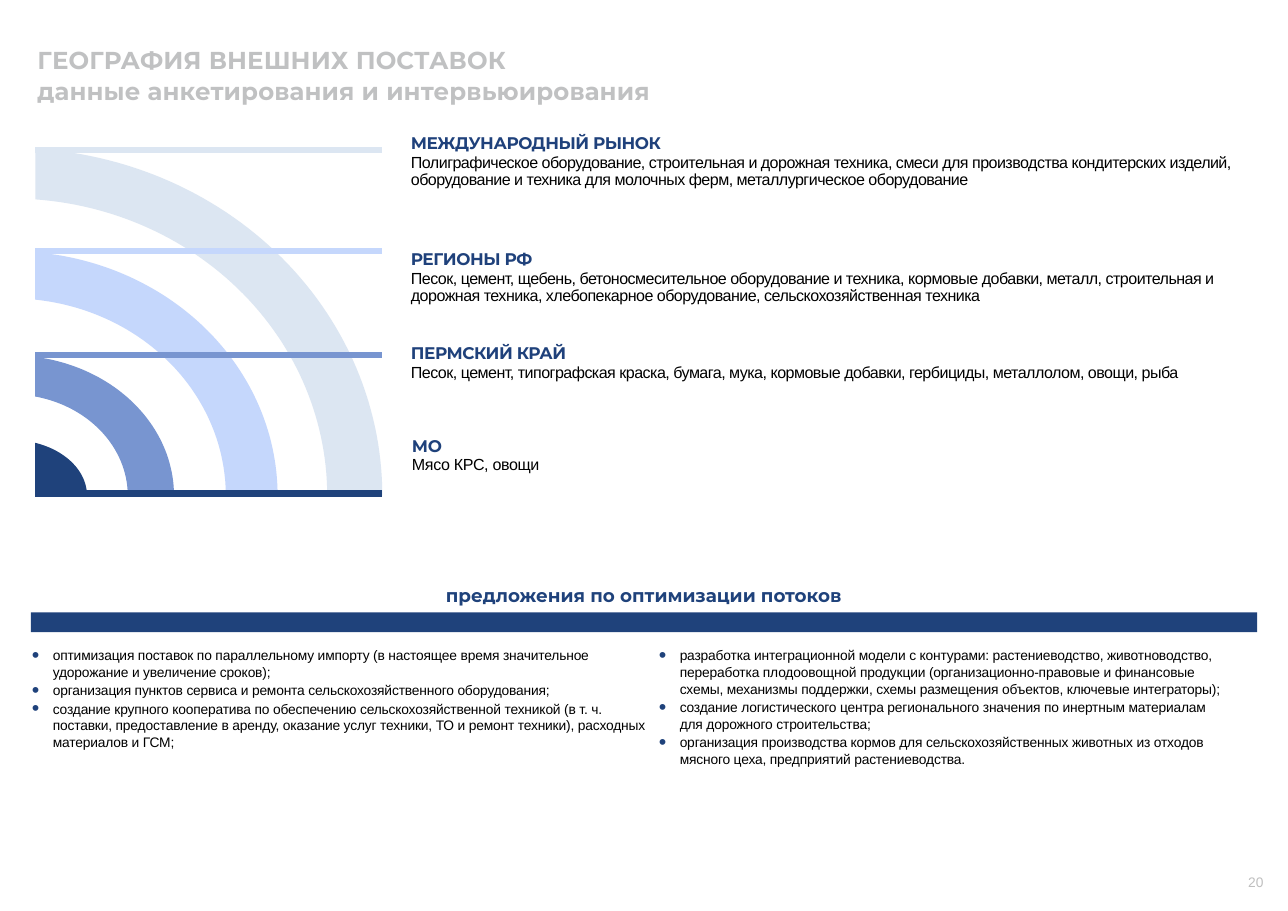
import math

import pptx
import pptx.dml.color
import pptx.enum.shapes
import pptx.enum.text
import pptx.oxml
import pptx.oxml.ns
import pptx.util

PX = 9144
RGB = pptx.dml.color.RGBColor
Pt = pptx.util.Pt
NAVY = RGB(0x1F, 0x42, 0x7B)
HEADING_BLUE = RGB(0x1F, 0x41, 0x7B)
BLUE = RGB(0x78, 0x95, 0xD0)
LIGHT_BLUE = RGB(0xC5, 0xD7, 0xFC)
PALE_BLUE = RGB(0xDC, 0xE6, 0xF2)
TITLE_GREY = RGB(0xC0, 0xC1, 0xC2)
PAGE_GREY = RGB(0xBF, 0xBF, 0xBF)
BLACK = RGB(0, 0, 0)

TITLE = {"name": "Montserrat", "size": Pt(16), "bold": True}
SUBTITLE = {"name": "Montserrat", "size": Pt(12), "bold": True}
HEADING = {"name": "Montserrat", "size": Pt(11), "bold": True}
BODY = {"name": "Arial", "size": Pt(10.5), "bold": False}
SMALL = {"name": "Arial", "size": Pt(9), "bold": False}

BEFORE = {"space_before": Pt(1)}
MARKET_LINES = {"space_before": Pt(1), "line_spacing": Pt(11.2)}
BULLET_LINES = {"space_before": Pt(1), "line_spacing": Pt(11)}
CENTRED = {"alignment": pptx.enum.text.PP_ALIGN.CENTER}

deck = pptx.Presentation()
deck.slide_width, deck.slide_height = 1169 * PX, 827 * PX
page = deck.slides.add_slide(deck.slide_layouts[6])


def add_text(bounds, insets, rows, layout):
    box = page.shapes.add_textbox(*[length * PX for length in bounds])
    frame = box.text_frame
    frame.word_wrap = True
    sides = ("margin_left", "margin_top", "margin_right", "margin_bottom")
    for side, inset in zip(sides, insets):
        setattr(frame, side, inset * PX)
    for number, (text, font, colour, spacing) in enumerate(rows):
        para = frame.paragraphs[0] if number == 0 else frame.add_paragraph()
        for name, value in layout.items():
            setattr(para, name, value)
        span = para.add_run()
        span.text = text
        for name, value in font.items():
            setattr(span.font, name, value)
        span.font.color.rgb = colour
        span._r.get_or_add_rPr().set("spc", str(spacing))
    return frame


def arc_points(top, right):
    left, centre, base = 32, 10, 450
    across = right - centre
    down = (base - top) / math.sqrt(1 - ((left - centre) / across) ** 2)
    start = math.acos((left - centre) / across)
    angles = [start * (1 - step / 60) for step in range(61)]
    return [((centre + across * math.cos(angle)) * PX, (base - down * math.sin(angle)) * PX)
            for angle in angles]


add_text((1123, 788, 45, 27), (10, 5, 10, 5), [("20", SMALL, PAGE_GREY, 0)], {})
add_text((33, 36, 1109, 65), (1, 5, 10, 5), [
    ("ГЕОГРАФИЯ ВНЕШНИХ ПОСТАВОК", TITLE, TITLE_GREY, 10),
    ("данные анкетирования и интервьюирования", TITLE, TITLE_GREY, 10),
], BEFORE)
add_text((28, 530, 1113, 20), (0, 0, 0, 0),
         [("предложения по оптимизации потоков", SUBTITLE, NAVY, 0)], CENTRED)

divider = page.shapes.add_shape(
    pptx.enum.shapes.MSO_SHAPE.RECTANGLE, 28 * PX, 556 * PX, 1113 * PX, 18 * PX)
divider.shadow.inherit = False
divider.fill.solid()
divider.fill.fore_color.rgb = NAVY
divider.line.fill.background()

bands = [
    (PALE_BLUE, (135, 347), (181, 297)),
    (LIGHT_BLUE, (229, 252), (272, 205)),
    (BLUE, (324, 158), (360, 116)),
    (NAVY, (402, 79), None),
]
for colour, outer, inner in bands:
    outline = arc_points(*outer)
    outline += arc_points(*inner)[::-1] if inner else [(32 * PX, 450 * PX)]
    builder = page.shapes.build_freeform(*outline[0])
    builder.add_line_segments(outline[1:], close=True)
    band = builder.convert_to_shape()
    band.shadow.inherit = False
    band.fill.solid()
    band.fill.fore_color.rgb = colour
    band.line.fill.background()

for colour, level in [(PALE_BLUE, 136), (LIGHT_BLUE, 228), (BLUE, 322), (NAVY, 448)]:
    bar = page.shapes.add_connector(
        pptx.enum.shapes.MSO_CONNECTOR.STRAIGHT, 32 * PX, level * PX, 347 * PX, level * PX)
    bar.line.color.rgb = colour
    bar.line.width = Pt(4)
    bar._element.spPr.append(pptx.oxml.parse_xml(
        "<a:effectLst %s/>" % pptx.oxml.ns.nsdecls("a")))

markets = [
    ((372, 122, 769, 49), "МЕЖДУНАРОДНЫЙ РЫНОК",
     "Полиграфическое оборудование, строительная и дорожная техника, смеси для производства "
     "кондитерских изделий, оборудование и техника для молочных ферм, металлургическое оборудование", -30),
    ((372, 228, 766, 49), "РЕГИОНЫ РФ",
     "Песок, цемент, щебень, бетоносмесительное оборудование и техника, кормовые добавки, металл, "
     "строительная и дорожная техника, хлебопекарное оборудование, сельскохозяйственная техника", -30),
    ((372, 313, 764, 34), "ПЕРМСКИЙ КРАЙ",
     "Песок, цемент, типографская краска, бумага, мука, кормовые добавки, гербициды, металлолом, "
     "овощи, рыба", -30),
    ((373, 397, 780, 34), "МО", "Мясо КРС, овощи", -20),
]
for bounds, heading, goods, spacing in markets:
    add_text(bounds, (1, 1, 0, 0), [
        (heading, HEADING, HEADING_BLUE, -30),
        (goods, BODY, BLACK, spacing),
    ], MARKET_LINES)

proposals = [
    ((28, 586, 557, 97), [
        "оптимизация поставок по параллельному импорту (в настоящее время значительное "
        "удорожание и увеличение сроков);",
        "организация пунктов сервиса и ремонта сельскохозяйственного оборудования;",
        "создание крупного кооператива по обеспечению сельскохозяйственной техникой (в т. ч. "
        "поставки, предоставление в аренду, оказание услуг техники, ТО и ремонт техники), "
        "расходных материалов и ГСМ;",
    ]),
    ((597, 586, 516, 112), [
        "разработка интеграционной модели с контурами: растениеводство, животноводство, "
        "переработка плодоовощной продукции (организационно-правовые и финансовые схемы, "
        "механизмы поддержки, схемы размещения объектов, ключевые интеграторы);",
        "создание логистического центра регионального значения по инертным материалам для "
        "дорожного строительства;",
        "организация производства кормов для сельскохозяйственных животных из отходов мясного "
        "цеха, предприятий растениеводства.",
    ]),
]
for bounds, items in proposals:
    frame = add_text(bounds, (0, 1, 0, 0),
                     [(item, SMALL, BLACK, -10) for item in items], BULLET_LINES)
    for para in frame.paragraphs:
        properties = para._p.get_or_add_pPr()
        properties.set("marL", str(20 * PX))
        properties.set("indent", str(-19 * PX))
        for bullet in ('<a:buClr %s><a:srgbClr val="{}"/></a:buClr>'.format(NAVY),
                       '<a:buSzPct %s val="155000"/>',
                       '<a:buFont %s typeface="Arial"/>',
                       '<a:buChar %s char="•"/>'):
            properties.append(pptx.oxml.parse_xml(bullet % pptx.oxml.ns.nsdecls("a")))

deck.save("out.pptx")
